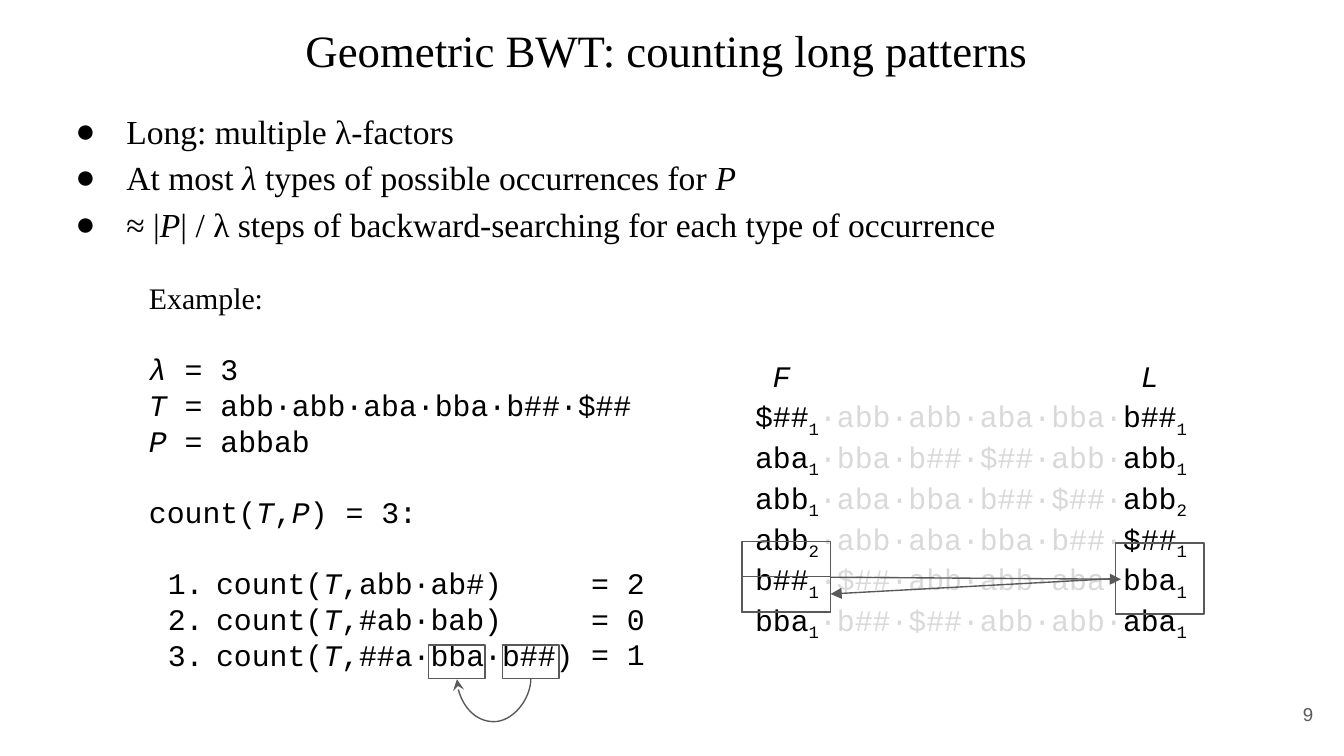
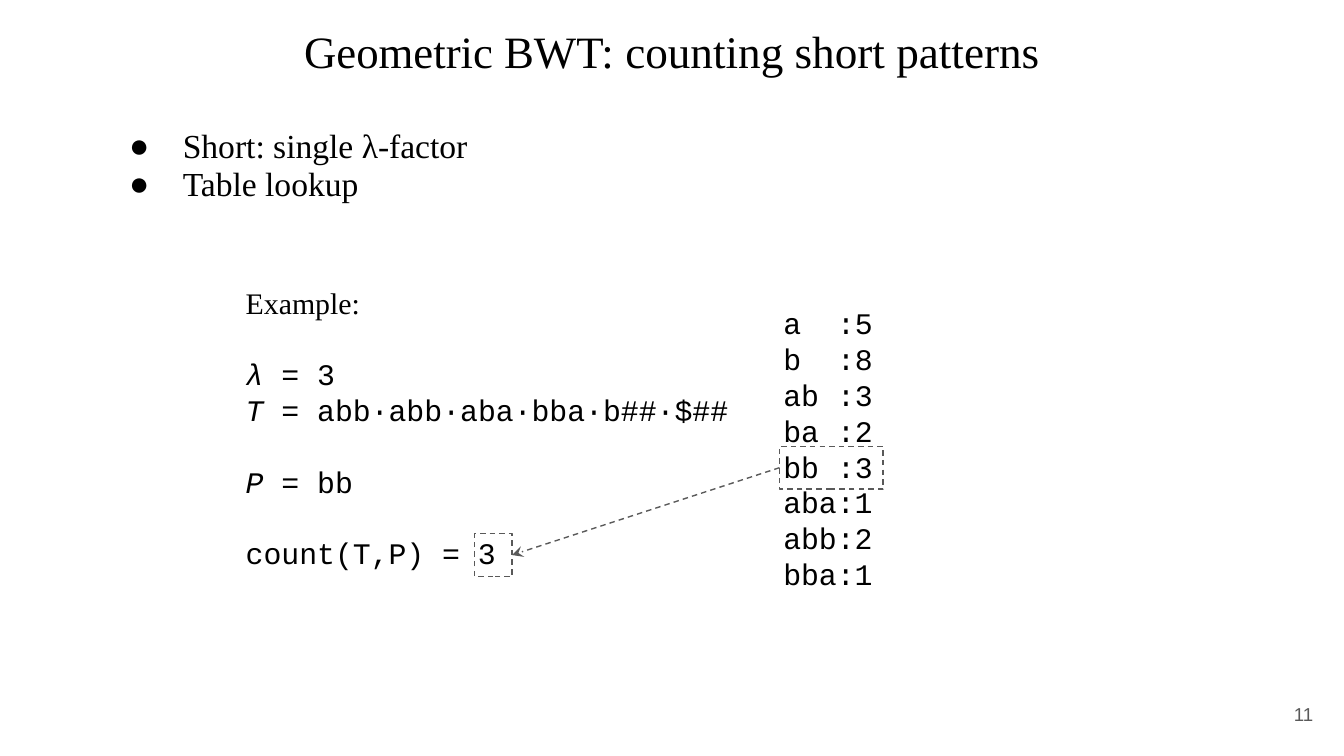
from pptx import Presentation
from pptx.dml.color import RGBColor as RGB
from pptx.enum.dml import MSO_LINE
from pptx.enum.shapes import MSO_CONNECTOR as CXN, MSO_SHAPE as SHAPE
from pptx.enum.text import MSO_ANCHOR as ANCHOR, MSO_AUTO_SIZE as AUTO, PP_ALIGN as ALIGN
from pptx.oxml.ns import qn
from pptx.util import Inches, Pt
from lxml import etree

COLORS = {"text": "000000", "muted": "D9D9D9", "line": "595959", "bg": "FFFFFF"}
SERIF, MONO, SANS = "Times New Roman", "Courier New", "Arial"
TOP, LEFT, BOTTOM, RIGHT = range(4)
GAP = 19  # points, one skipped line of code


def rgb(name):
    return RGB.from_string(COLORS[name])


def sub(parent, tag, **attrs):
    return etree.SubElement(parent, qn(tag), attrs)


# Text helpers

def add_run(p, text, size, font, color="text", italic=False, base=0):
    r = p.add_run()
    r.text = text
    f = r.font
    f.size, f.name, f.italic = Pt(size), font, italic
    f.color.rgb = rgb(color)
    if base:
        r._r.get_or_add_rPr().set("baseline", str(base * 1000))


def add_marked(p, text, size, font):
    """Add runs; the parts between asterisks are italic."""
    for i, part in enumerate(text.split("*")):
        if part:
            add_run(p, part, size, font, italic=i % 2 == 1)


def paragraphs(tf):
    """Yield the first paragraph of a frame, then new ones."""
    yield tf.paragraphs[0]
    while True:
        yield tf.add_paragraph()


def add_bullet(p, indent, font, tag, **attrs):
    pPr = p._p.get_or_add_pPr()
    pPr.set("marL", str(Inches(0.5)))
    pPr.set("indent", str(Inches(-indent)))
    sub(sub(pPr, "a:buClr"), "a:srgbClr", val=COLORS["text"])
    sub(pPr, "a:buFont", typeface=font)
    sub(pPr, tag, **attrs)


def add_tabs(p, *stops):
    tabs = sub(p._p.get_or_add_pPr(), "a:tabLst")
    for x in stops:
        sub(tabs, "a:tab", pos=str(Inches(x)), algn="l")


def set_frame(sp, anchor=ANCHOR.TOP):
    tf = sp.text_frame
    tf.word_wrap, tf.auto_size, tf.vertical_anchor = True, AUTO.NONE, anchor
    tf.margin_left = tf.margin_right = tf.margin_top = tf.margin_bottom = Inches(0.1)
    return tf


def place(sp, box):
    sp.left, sp.top, sp.width, sp.height = map(Inches, box)
    return set_frame(sp)


def text_box(slide, box, anchor=ANCHOR.TOP):
    return set_frame(slide.shapes.add_textbox(*map(Inches, box)), anchor)


# Drawing helpers

def style_line(line, dash=False):
    line.color.rgb = rgb("line")
    line.width = Pt(0.75)
    if dash:
        line.dash_style = MSO_LINE.DASH


def frame(slide, box, dash=False):
    sp = slide.shapes.add_shape(SHAPE.RECTANGLE, *map(Inches, box))
    sp.fill.background()
    sp.shadow.inherit = False
    style_line(sp.line, dash)
    return sp


def arrow(slide, start, end, head, dash=False, kind=CXN.STRAIGHT):
    """Draw an arrow; each end is a (shape, side) pair or an (x, y) point."""
    c = slide.shapes.add_connector(kind, 0, 0, 0, 0)
    if isinstance(start[0], (int, float)):
        c.begin_x, c.begin_y = map(Inches, start)
    else:
        c.begin_connect(*start)
    if isinstance(end[0], (int, float)):
        c.end_x, c.end_y = map(Inches, end)
    else:
        c.end_connect(*end)
    style_line(c.line, dash)
    sub(c.line._get_or_add_ln(), "a:tailEnd", type=head)
    sub(c._element.spPr, "a:effectLst")
    return c


def loop_arrow(slide, start, end, depth):
    """Curve from the bottom of one frame to the bottom of another on its left."""
    c = arrow(slide, (start, BOTTOM), (end, BOTTOM), "stealth", kind=CXN.CURVE)
    span = start.left - end.left
    mid_x = end.left + (end.width + span) // 2
    thin = Inches(0.01)
    xfrm = c._element.spPr.find(qn("a:xfrm"))
    for name in ("flipH", "flipV"):
        xfrm.attrib.pop(name, None)
    xfrm.set("rot", str(90 * 60000))
    c.left, c.top = mid_x - thin // 2, start.top + start.height - span // 2
    c.width, c.height = thin, span
    guides = c._element.spPr.find(qn("a:prstGeom")).get_or_add_avLst()
    sub(guides, "a:gd", name="adj1", fmla=f"val {round(depth / 0.01 * 100000)}")


# Shared slide parts

def base_slide(prs, title, number):
    slide = prs.slides.add_slide(prs.slide_layouts[1])
    slide.background.fill.solid()
    slide.background.fill.fore_color.rgb = rgb("bg")
    p = place(slide.shapes.title, (0.34, 0.07, 9.32, 0.63)).paragraphs[0]
    p.alignment = ALIGN.CENTER
    for text, size in title:
        add_run(p, text, size, SERIF)
    p = text_box(slide, (9.27, 5.1, 0.6, 0.43), ANCHOR.MIDDLE).paragraphs[0]
    p.alignment = ALIGN.RIGHT
    add_run(p, number, 10, SANS, "line")
    return slide


def bullet_list(slide, box, items, indent, spacing):
    tf = place(slide.placeholders[1], box)
    for p, item in zip(paragraphs(tf), items):
        p.line_spacing, p.space_before = spacing, Pt(0)
        add_bullet(p, indent, SERIF, "a:buChar", char="●")
        add_marked(p, item, 18, SERIF)


def example(slide, box, groups, steps=()):
    """Write groups of code lines, one line apart, then numbered steps."""
    new = paragraphs(text_box(slide, box))
    add_run(next(new), "Example:", 16, SERIF)
    for group in groups:
        for i, line in enumerate(group):
            p = next(new)
            p.space_before = Pt(0 if i else GAP)
            add_marked(p, line, 16, MONO)
    for i, (call, _) in enumerate(steps):
        p = next(new)
        p.space_before = Pt(0 if i else GAP)
        add_bullet(p, 0.36, MONO, "a:buAutoNum", type="arabicPeriod")
        add_marked(p, call, 16, MONO)
    if steps:
        # Results stand in a column of their own
        results = text_box(slide, (box[0] + 3.29, box[1] + 2.12, 0.8, 0.96))
        for p, (_, result) in zip(paragraphs(results), steps):
            add_run(p, f"= {result}", 16, MONO)


def rotation_matrix(slide, box, rows):
    new = paragraphs(text_box(slide, box))
    p = next(new)
    p.space_after = Pt(2.5)
    add_tabs(p, 0.13, 2.87)
    add_run(p, "\tF\tL", 16, MONO, italic=True)
    for (first, first_rank, middle, last, last_rank), p in zip(rows, new):
        add_run(p, first, 16, MONO)
        add_run(p, first_rank, 16, MONO, base=-25)
        add_run(p, f"·{middle}·", 16, MONO, "muted")
        add_run(p, last, 16, MONO)
        add_run(p, last_rank, 16, MONO, base=-25)


def lookup_table(slide, box, counts):
    for (key, n), p in zip(counts, paragraphs(text_box(slide, box))):
        gap = ""
        if len(key) < 3:
            add_tabs(p, 0.4)
            gap = "\t"
        add_run(p, f"{key}{gap}:{n}", 16, MONO)


# Slides

def long_patterns(prs):
    slide = base_slide(prs, [("Geometric BWT: counting long patterns ", 24)], "9")
    bullet_list(slide, (0.34, 0.68, 9.32, 1.22), [
        "Long: multiple λ-factors",
        "At most *λ *types of possible occurrences for *P*",
        "≈ |*P*| / λ steps of backward-searching for each type of occurrence",
    ], 0.38, 1.15)
    example(slide, (1.01, 1.98, 4.12, 3.16), [
        ["*λ = *3", "*T* = abb·abb·aba·bba·b##·$##", "*P* = abbab"],
        ["count(*T*,*P*) = 3:"],
    ], [
        ("count(*T*,abb·ab#)", 2),
        ("count(*T*,#ab·bab)", 0),
        ("count(*T*,##a·bba·b##)", 1),
    ])
    x, y = 5.52, 2.56
    rotation_matrix(slide, (x, y, 3.44, 2.09), [
        ("$##", "1", "abb·abb·aba·bba", "b##", "1"),
        ("aba", "1", "bba·b##·$##·abb", "abb", "1"),
        ("abb", "1", "aba·bba·b##·$##", "abb", "2"),
        ("abb", "2", "abb·aba·bba·b##", "$##", "1"),
        ("b##", "1", "$##·abb·abb·aba", "bba", "1"),
        ("bba", "1", "b##·$##·abb·abb", "aba", "1"),
    ])
    # Backward-search step between columns F and L
    f_range = frame(slide, (x, y + 1.47, 0.66, 0.53))
    f_match = frame(slide, (x, y + 1.73, 0.66, 0.26))
    l_range = frame(slide, (x + 2.78, y + 1.48, 0.66, 0.53))
    arrow(slide, (f_range, RIGHT), (x + 2.82, y + 1.75), "triangle")
    arrow(slide, (l_range, LEFT), (f_match, RIGHT), "triangle")
    # Factors are read from right to left
    bba, b = [frame(slide, (left, 4.8, 0.42, 0.25)) for left in (3.19, 3.74)]
    loop_arrow(slide, b, bba, 0.33)


def short_patterns(prs):
    slide = base_slide(prs, [("Geometric BWT: ", 24), ("counting short patterns", 24.2)], "11")
    bullet_list(slide, (0.76, 0.85, 7.87, 0.95),
                ["Short: single λ-factor", "Table lookup"], 0.4, 0.95)
    example(slide, (1.73, 2.02, 3.91, 2.36), [
        ["*λ = *3", "*T* = abb·abb·aba·bba·b##·$##"],
        ["*P* = bb"],
        ["count(T,P) = 3"],
    ])
    lookup_table(slide, (5.73, 2.17, 0.9, 2.36), [
        ("a", 5), ("b", 8), ("ab", 3), ("ba", 2),
        ("bb", 3), ("aba", 1), ("abb", 2), ("bba", 1),
    ])
    # The entry found gives the count
    answer = frame(slide, (3.53, 3.97, 0.28, 0.32), dash=True)
    entry = frame(slide, (5.8, 3.32, 0.77, 0.32), dash=True)
    arrow(slide, (entry, LEFT), (answer, RIGHT), "stealth", dash=True)


def main():
    prs = Presentation()
    # Widescreen, 16:9
    prs.slide_width = Inches(10)
    prs.slide_height = prs.slide_width * 9 // 16
    long_patterns(prs)
    short_patterns(prs)
    prs.save("out.pptx")


if __name__ == "__main__":
    main()
